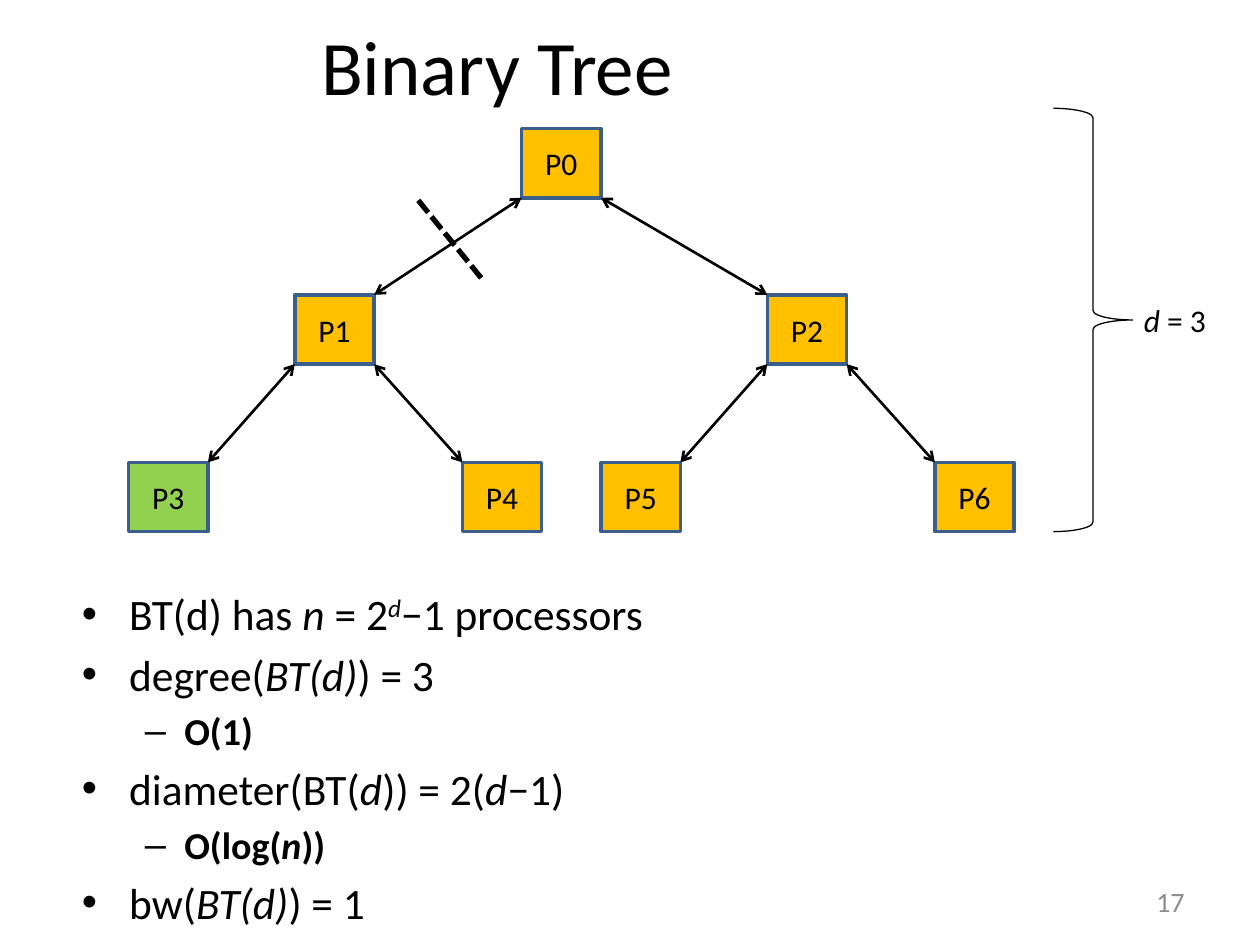
"""Build the binary tree network slide."""
from lxml.etree import SubElement
from pptx import Presentation
from pptx.dml.color import RGBColor
from pptx.enum.dml import MSO_LINE
from pptx.enum.shapes import MSO_CONNECTOR, MSO_SHAPE
from pptx.enum.text import MSO_ANCHOR, MSO_AUTO_SIZE, PP_ALIGN
from pptx.oxml.ns import qn
from pptx.util import Inches, Pt

COLORS = {
    "text": "000000",
    "background": "FFFFFF",
    "node": "FFC000",
    "leaf": "92D050",
    "outline": "3A5F8C",
    "number": "8C8C8C",
}
FONT = "Calibri"
NODE_WIDTH, NODE_HEIGHT = 0.63, 0.55
NODES = [(4.14, 1.02), (2.34, 2.34), (6.09, 2.34),
         (1.02, 3.67), (3.67, 3.67), (4.77, 3.67), (7.42, 3.67)]
BULLETS = [
    (0, [("BT(d) has ", ""), ("n", "i"), (" = 2", ""), ("d", "i^"), ("−1 processors", "")]),
    (0, [("degree(", ""), ("BT(d)", "i"), (") = 3", "")]),
    (1, [("O(1)", "")]),
    (0, [("diameter(BT(", ""), ("d", "i"), (")) = 2(", ""), ("d", "i"), ("−1)", "")]),
    (1, [("O(log(", ""), ("n", "i"), ("))", "")]),
    (0, [("bw(", ""), ("BT(d)", "i"), (") = 1", "")]),
]


def write(paragraph, runs, size, color="text", bold=None):
    paragraph.font.name = FONT
    paragraph.font.size = Pt(size)
    paragraph.font.bold = bold
    paragraph.font.color.rgb = RGBColor.from_string(COLORS[color])
    for text, style in runs:
        run = paragraph.add_run()
        run.text = text
        if "i" in style:
            run.font.italic = True
        if "^" in style:
            run._r.get_or_add_rPr().set("baseline", "30000")


def add_line(start, end, width):
    points = [Inches(value) for value in (*start, *end)]
    connector = slide.shapes.add_connector(MSO_CONNECTOR.STRAIGHT, *points)
    connector.line.width = Pt(width)
    connector.line.color.rgb = RGBColor.from_string(COLORS["text"])
    SubElement(connector._element.spPr, qn("a:effectLst"))
    return connector


presentation = Presentation()
presentation.slide_width = Inches(10)
presentation.slide_height = Inches(7.5)
slide = presentation.slides.add_slide(presentation.slide_layouts[1])

title = slide.shapes.title
title.left, title.top = Inches(0.39), Inches(0)
title.width, title.height = Inches(7.11), Inches(1.02)
write(title.text_frame.paragraphs[0], [("Binary Tree", "")], 44)

body = slide.placeholders[1]
body.left, body.top = Inches(0.55), Inches(4.61)
body.width, body.height = Inches(8.13), Inches(2.89)
body.fill.solid()
body.fill.fore_color.rgb = RGBColor.from_string(COLORS["background"])
body.text_frame.auto_size = MSO_AUTO_SIZE.NONE
for index, (level, runs) in enumerate(BULLETS):
    paragraph = body.text_frame.add_paragraph() if index else body.text_frame.paragraphs[0]
    paragraph.level = level
    write(paragraph, runs, 21.7 if level else 24.8, bold=True if level else None)

for index, (left, top) in enumerate(NODES):
    node = slide.shapes.add_shape(MSO_SHAPE.RECTANGLE, Inches(left), Inches(top),
                                  Inches(NODE_WIDTH), Inches(NODE_HEIGHT))
    node.shadow.inherit = False
    node.fill.solid()
    node.fill.fore_color.rgb = RGBColor.from_string(COLORS["leaf" if index == 3 else "node"])
    node.line.color.rgb = RGBColor.from_string(COLORS["outline"])
    node.line.width = Pt(2)
    node.text_frame.vertical_anchor = MSO_ANCHOR.MIDDLE
    label = node.text_frame.paragraphs[0]
    label.alignment = PP_ALIGN.CENTER
    write(label, [(f"P{index}", "")], 18)

for child in range(1, len(NODES)):
    parent_left, parent_top = NODES[(child - 1) // 2]
    child_left, child_top = NODES[child]
    is_left_child = child % 2 == 1
    start = (parent_left + (0 if is_left_child else NODE_WIDTH), parent_top + NODE_HEIGHT)
    end = (child_left + (NODE_WIDTH if is_left_child else 0), child_top)
    edge = add_line(start, end, 1.5)
    for tag in ("a:headEnd", "a:tailEnd"):
        SubElement(edge.line._get_or_add_ln(), qn(tag)).set("type", "arrow")

cut = add_line((3.32, 1.59), (3.83, 2.22), 3)
cut.line.dash_style = MSO_LINE.SQUARE_DOT

brace = slide.shapes.add_shape(MSO_SHAPE.RIGHT_BRACE, Inches(8.36), Inches(0.86),
                               Inches(0.63), Inches(3.36))
brace.shadow.inherit = False
brace.adjustments[0], brace.adjustments[1] = 0.12, 0.5
brace.fill.background()
brace.line.color.rgb = RGBColor.from_string(COLORS["text"])
brace.line.width = Pt(0.75)

depth = slide.shapes.add_textbox(Inches(8.98), Inches(2.34), Inches(0.78), Inches(0.4))
depth.text_frame.auto_size = MSO_AUTO_SIZE.SHAPE_TO_FIT_TEXT
write(depth.text_frame.paragraphs[0], [("d", "i"), (" = 3", "")], 18)

number = slide.shapes.add_textbox(Inches(7.17), Inches(6.95), Inches(2.33), Inches(0.4))
number.text_frame.word_wrap = True
number.text_frame.vertical_anchor = MSO_ANCHOR.MIDDLE
number.text_frame.paragraphs[0].alignment = PP_ALIGN.RIGHT
write(number.text_frame.paragraphs[0], [("17", "")], 16, "number")

presentation.save("out.pptx")
